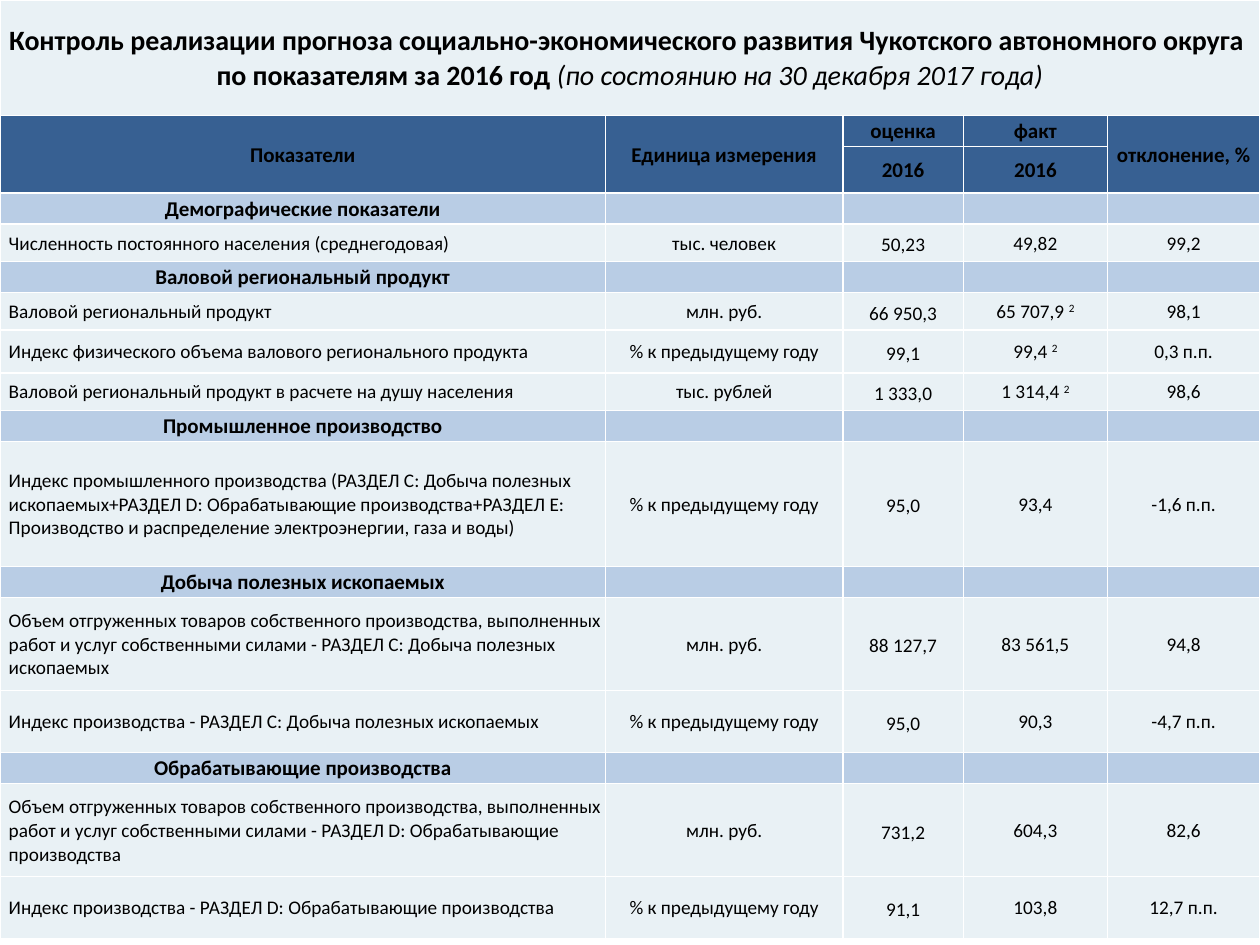
from lxml import etree
from pptx import Presentation
from pptx.dml.color import RGBColor
from pptx.enum import text as t
from pptx.oxml import ns
from pptx.util import Pt

HEAD = [
    ("Контроль реализации прогноза социально-экономического развития Чукотского автономного округа ", {"bold": True}),
    ("по показателям за 2016 год ", {"bold": True}),
    ("(по состоянию на 30 декабря 2017 года)", {"italic": True}),
]
TOP = ["Показатели", "Единица измерения", "оценка", "факт", "отклонение, %"]
SUB = ["", "", "2016", "2016", ""]
YEAR = "% к предыдущему году"
GOODS = "Объем отгруженных товаров собственного производства, выполненных работ и услуг собственными силами - "
MINE = "РАЗДЕЛ C: Добыча полезных ископаемых"
MAKE = "РАЗДЕЛ D: Обрабатывающие производства"
DATA = [
    ("Демографические показатели", [
        (21.4, "Численность постоянного населения (среднегодовая)", "тыс. человек", "50,23", "49,82", "99,2")]),
    ("Валовой региональный продукт", [
        (21.4, "Валовой региональный продукт", "млн. руб.", "66 950,3", "65 707,9 ^2", "98,1"),
        (24.5, "Индекс физического объема валового регионального продукта", YEAR, "99,1", "99,4 ^2", "0,3 п.п."),
        (21.4, "Валовой региональный продукт в расчете на душу населения", "тыс. рублей", "1 333,0", "1 314,4 ^2", "98,6")]),
    ("Промышленное производство", [
        (71.3, "Индекс промышленного производства (РАЗДЕЛ C: Добыча полезных ископаемых+РАЗДЕЛ D: "
         "Обрабатывающие производства+РАЗДЕЛ E: Производство и распределение электроэнергии, газа и воды)",
         YEAR, "95,0", "93,4", "-1,6 п.п.")]),
    ("Добыча полезных ископаемых", [
        (53.3, GOODS + MINE, "млн. руб.", "88 127,7", "83 561,5", "94,8"),
        (35.3, "Индекс производства - " + MINE, YEAR, "95,0", "90,3", "-4,7 п.п.")]),
    ("Обрабатывающие производства", [
        (53.3, GOODS + MAKE, "млн. руб.", "731,2", "604,3", "82,6"),
        (35.3, "Индекс производства - " + MAKE, YEAR, "91,1", "103,8", "12,7 п.п.")]),
]
COLS = [346.1, 135.5, 69, 82.2, 87.2]
BAND = 17.8
PALE, DARK, BLUE = "E9F1F5", "376092", "B9CDE5"
ROWS = [(66, PALE, 16, True, [""] * 5), (BAND, DARK, 12, True, TOP), (26.6, DARK, 12, True, SUB)]
for name, items in DATA:
    ROWS.append((BAND, BLUE, 12, True, [name, "", "", "", ""]))
    ROWS += [(high, PALE, 11, False, texts) for high, *texts in items]


def paint(fill, color):
    fill.solid()
    fill.fore_color.rgb = RGBColor.from_string(color)


def write(para, words, size, **style):
    run = para.add_run()
    run.text = words
    form = {"name": "Calibri", "size": Pt(size), "bold": False, "italic": False, **style}
    for key, val in form.items():
        setattr(run.font, key, val)
    paint(run.font.fill, "000000")
    return run


def edge(cell):
    props = cell._tc.get_or_add_tcPr()
    for spot, side in enumerate(("lnL", "lnR", "lnT", "lnB")):
        line = etree.Element(ns.qn("a:" + side), w=str(Pt(1)))
        fill = etree.SubElement(line, ns.qn("a:solidFill"))
        etree.SubElement(fill, ns.qn("a:srgbClr"), val="FFFFFF")
        props.insert(spot, line)


def dress(cell, color, body):
    form = {
        "margin_left": Pt(5 if body else 1),
        "margin_right": Pt(1),
        "margin_top": Pt(0.7),
        "margin_bottom": Pt(0),
        "vertical_anchor": t.MSO_ANCHOR.MIDDLE,
    }
    for key, val in form.items():
        setattr(cell, key, val)
    paint(cell.fill, color)
    edge(cell)


deck = Presentation()
deck.slide_width, deck.slide_height = Pt(720), Pt(540)
slide = deck.slides.add_slide(deck.slide_layouts[6])
high = sum(row[0] for row in ROWS)
grid = slide.shapes.add_table(len(ROWS), len(COLS), 0, 0, Pt(720), Pt(high)).table
for col, wide in zip(grid.columns, COLS):
    col.width = Pt(wide)

for r, (tall, color, size, bold, texts) in enumerate(ROWS):
    grid.rows[r].height = Pt(tall)
    for c, words in enumerate(texts):
        cell = grid.cell(r, c)
        body = size == 11
        dress(cell, color, body and c == 0)
        para = cell.text_frame.paragraphs[0]
        para.alignment = t.PP_ALIGN.LEFT if body and c == 0 else t.PP_ALIGN.CENTER
        if body and c == 2:
            para.line_spacing = 1.15
        main, _, note = words.partition("^")
        if main:
            write(para, main, size, bold=bold)
        else:
            etree.SubElement(para._p, ns.qn("a:endParaRPr"), sz=str(size * 100))
        if note:
            write(para, note, size)._r.get_or_add_rPr().set("baseline", "30000")

for first, last in [((0, 0), (0, 4))] + [((1, c), (2, c)) for c in (0, 1, 4)]:
    grid.cell(*first).merge(grid.cell(*last))

title = grid.cell(0, 0).text_frame.paragraphs[0]
for n, (words, style) in enumerate(HEAD):
    if n == 1:
        title.add_line_break()
    write(title, words, 16, **style)

deck.save("out.pptx")
